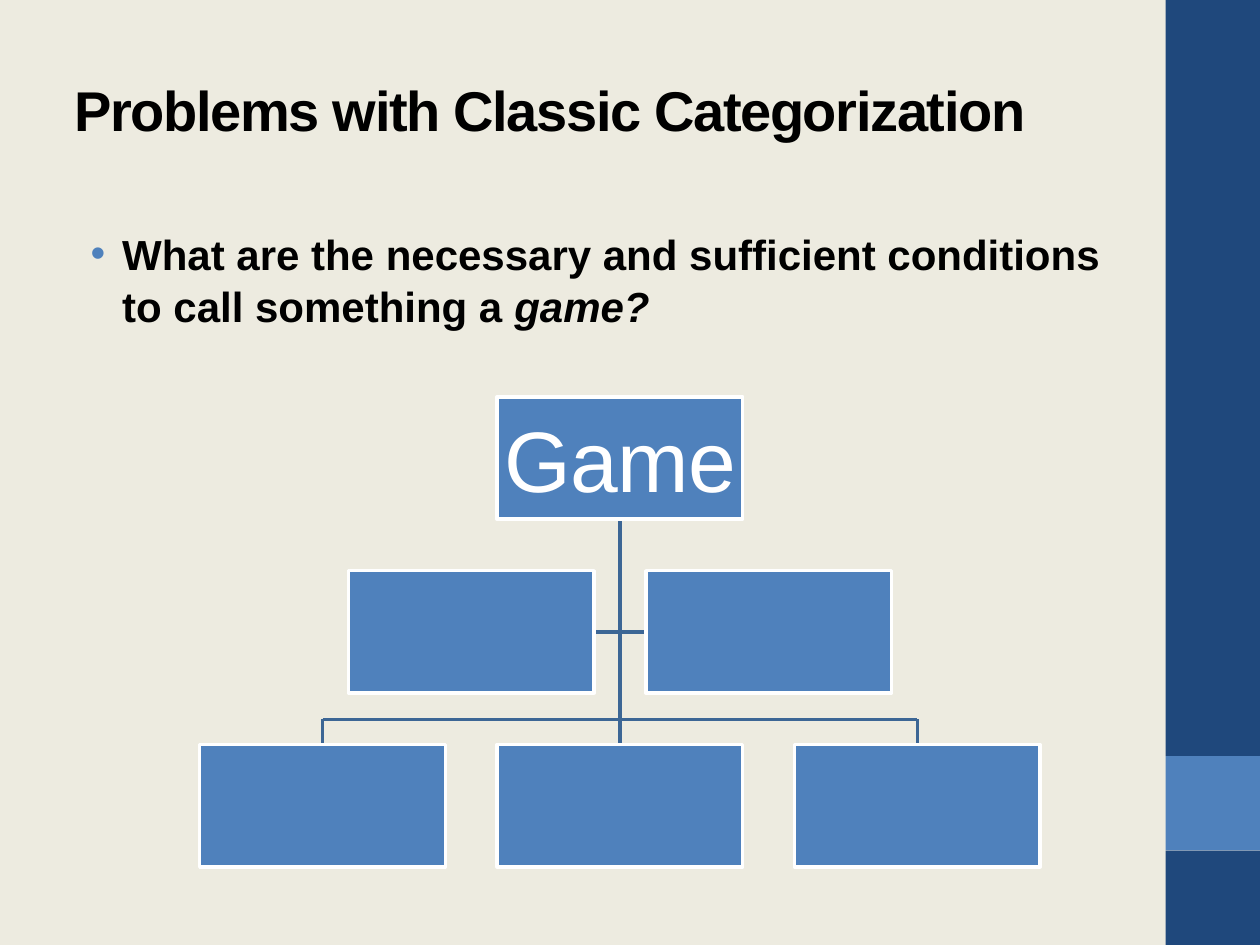
"""Build the slide on the problems of classic categorization."""
from typing import NamedTuple

from lxml.etree import SubElement
from pptx import Presentation
from pptx.dml.color import RGBColor
from pptx.enum.shapes import MSO_CONNECTOR as Connector, MSO_SHAPE as Preset
from pptx.enum.text import MSO_ANCHOR as Anchor, MSO_AUTO_SIZE as AutoSize, PP_ALIGN as Align
from pptx.oxml.ns import qn
from pptx.util import Inches, Pt

COLORS = {
    "paper": "EDEBE0", "navy": "1F487C", "blue": "4F81BC",
    "branch": "3C6695", "white": "FFFFFF", "black": "000000",
}
CENTER, TOP = 4.92, 3.15
BOX_W, BOX_H = 1.95, 0.97
COL_STEP, ROW_STEP = 2.36, 1.38


class Panel(NamedTuple):
    top: float
    height: float
    color: str


class Node(NamedTuple):
    column: float
    row: int
    label: str = ""


class Branch(NamedTuple):
    x1: float
    y1: float
    x2: float
    y2: float


SIDEBAR = [Panel(0, 6, "navy"), Panel(6, 0.75, "blue"), Panel(6.75, 0.75, "navy")]
NODES = [Node(0, 0, "Game")] + [Node(column, 1) for column in (-0.5, 0.5)] + [
    Node(column, 2) for column in (-1, 0, 1)]


def rgb(name: str) -> RGBColor:
    return RGBColor.from_string(COLORS[name])


def add_run(paragraph, text: str, size: float, color: str = "black",
            bold: bool = False, italic: bool = False, spacing: float = 0) -> None:
    run = paragraph.add_run()
    run.text = text
    font = run.font
    font.name, font.size, font.bold, font.italic = "Arial", Pt(size), bold, italic
    font.color.rgb = rgb(color)
    if spacing:
        run._r.get_or_add_rPr().set("spc", str(round(spacing * 100)))


def set_frame(frame, anchor: Anchor, top: float = 0, wrap: bool = True) -> None:
    frame.margin_left = frame.margin_right = frame.margin_bottom = 0
    frame.margin_top = Inches(top)
    frame.vertical_anchor, frame.word_wrap = anchor, wrap
    frame.auto_size = AutoSize.NONE


def place(shape, left: float, top: float, width: float, height: float) -> None:
    shape.left, shape.top = Inches(left), Inches(top)
    shape.width, shape.height = Inches(width), Inches(height)


def add_box(slide, left: float, top: float, width: float, height: float, color: str):
    box = slide.shapes.add_shape(
        Preset.RECTANGLE, Inches(left), Inches(top), Inches(width), Inches(height))
    box.shadow.inherit = False
    box.fill.solid()
    box.fill.fore_color.rgb = rgb(color)
    box.line.fill.background()
    return box


def add_branch(slide, branch: Branch) -> None:
    line = slide.shapes.add_connector(Connector.STRAIGHT, *map(Inches, branch))
    line.line.color.rgb, line.line.width = rgb("branch"), Pt(2)
    SubElement(line._element.spPr, qn("a:effectLst"))


def add_node(slide, node: Node) -> None:
    left = CENTER + node.column * COL_STEP - BOX_W / 2
    box = add_box(slide, left, TOP + node.row * ROW_STEP, BOX_W, BOX_H, "blue")
    box.line.color.rgb, box.line.width = rgb("white"), Pt(2)
    if node.label:
        set_frame(box.text_frame, Anchor.MIDDLE, wrap=False)
        label = box.text_frame.paragraphs[0]
        label.alignment = Align.CENTER
        add_run(label, node.label, 49, "white", spacing=-0.3)


def add_bullet(paragraph, color: str) -> None:
    properties = paragraph._p.get_or_add_pPr()
    properties.set("marL", str(Inches(0.26)))
    properties.set("indent", str(-Inches(0.25)))
    bullet_color = SubElement(properties, qn("a:buClr"))
    SubElement(bullet_color, qn("a:srgbClr"), val=COLORS[color])
    SubElement(properties, qn("a:buFont"), typeface="Arial")
    SubElement(properties, qn("a:buChar"), char="•")


def add_title(slide) -> None:
    title = slide.shapes.title
    place(title, 0.59, 0.18, 8.83, 1.36)
    set_frame(title.text_frame, Anchor.TOP, 0.42)
    heading = title.text_frame.paragraphs[0]
    heading.alignment = Align.LEFT
    add_run(heading, "Problems with Classic Categorization", 32, bold=True, spacing=-0.8)


def add_question(slide) -> None:
    body = slide.placeholders[1]
    place(body, 0.71, 1.79, 8.2, 1)
    set_frame(body.text_frame, Anchor.TOP)
    question = body.text_frame.paragraphs[0]
    question.line_spacing, question.space_before = 1.05, Pt(0)
    add_bullet(question, "blue")
    add_run(question, "What are the necessary and sufficient conditions to call something a ",
            24, bold=True)
    add_run(question, "game?", 24, bold=True, italic=True)


def add_tree(slide) -> None:
    leaf_top = TOP + 2 * ROW_STEP
    bar = leaf_top - 0.2
    middle = TOP + ROW_STEP + BOX_H / 2
    side = (COL_STEP - BOX_W) / 2
    branches = [
        Branch(CENTER, TOP + BOX_H, CENTER, leaf_top),
        Branch(CENTER - side, middle, CENTER + side, middle),
        Branch(CENTER - COL_STEP, bar, CENTER + COL_STEP, bar),
    ] + [Branch(x, bar, x, leaf_top) for x in (CENTER - COL_STEP, CENTER + COL_STEP)]
    for branch in branches:
        add_branch(slide, branch)
    for node in NODES:
        add_node(slide, node)


def main() -> None:
    deck = Presentation()
    deck.slide_width, deck.slide_height = Inches(10), Inches(7.5)
    slide = deck.slides.add_slide(deck.slide_layouts[1])
    slide.background.fill.solid()
    slide.background.fill.fore_color.rgb = rgb("paper")
    for panel in SIDEBAR:
        add_box(slide, 9.25, panel.top, 0.75, panel.height, panel.color)
    add_title(slide)
    add_question(slide)
    add_tree(slide)
    deck.save("out.pptx")


if __name__ == "__main__":
    main()
